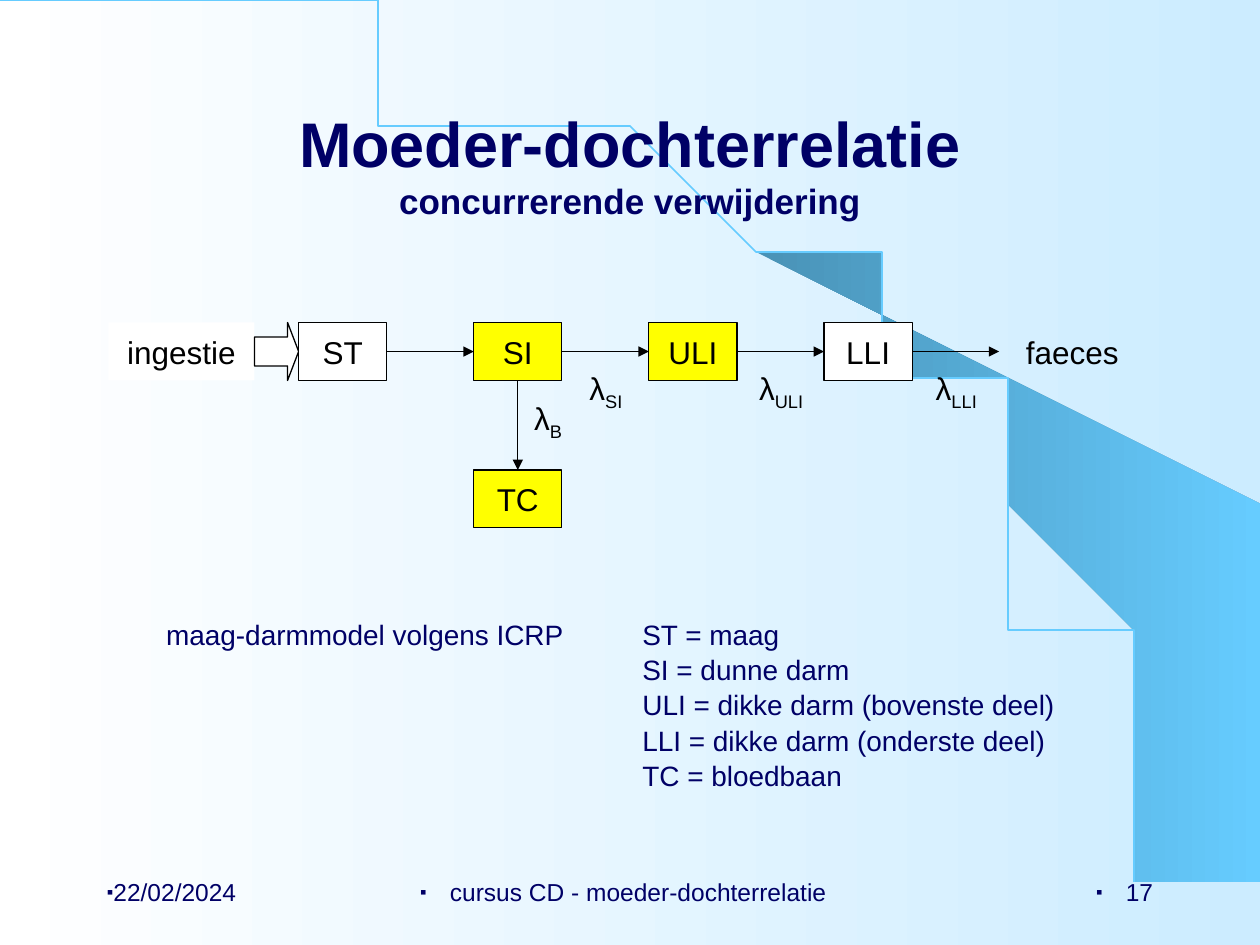
from lxml import etree
from pptx import Presentation
from pptx.dml.color import RGBColor
from pptx.enum.shapes import MSO_CONNECTOR, MSO_SHAPE
from pptx.enum.text import MSO_ANCHOR, PP_ALIGN
from pptx.oxml.ns import qn
from pptx.util import Inches, Pt

RECT, BLOCK_ARROW = MSO_SHAPE.RECTANGLE, MSO_SHAPE.RIGHT_ARROW
STRAIGHT = MSO_CONNECTOR.STRAIGHT
TOP, MIDDLE = MSO_ANCHOR.TOP, MSO_ANCHOR.MIDDLE
LEFT, CENTER, RIGHT = PP_ALIGN.LEFT, PP_ALIGN.CENTER, PP_ALIGN.RIGHT
SIDE_TOP, SIDE_LEFT, SIDE_BOTTOM, SIDE_RIGHT = range(4)

COLORS = {
    "navy": "000066", "black": "000000", "white": "FFFFFF", "yellow": "FFFF00",
    "pale": "CCECFF", "sky": "66CCFF", "steel": "4992B6",
}
FONT = "Arial"
WIDE_INSETS = (0.1, 0.05, 0.1, 0.05)
BOX_INSETS = (0.02, 0.08, 0.02, 0.02)
LABEL_INSETS = (0.02, 0.02, 0.02, 0.02)

CHAIN_LEFT, CHAIN_TOP, PITCH = 2.37, 2.56, 1.39
BOX_W, BOX_H = 0.7, 0.46
CHAIN = [("ST", "white"), ("SI", "yellow"), ("ULI", "yellow"), ("LLI", "white")]

WEDGE = [
    (9.2, 7.48), (9.99, 7.49), (9.99, 4.23), (5.89, 1.73), (6.24, 1.99),
    (6.53, 2.22), (6.85, 2.5), (7.16, 2.8), (7.62, 3.3), (8.03, 3.84),
    (8.32, 4.31), (8.58, 4.79), (8.78, 5.28), (8.93, 5.72), (9.03, 6.09),
    (9.13, 6.56), (9.17, 6.96),
]
ARC = [(0, 0), (5.08, 0), (9.2, 3.35), (9.2, 7.49)]
ARC_STEPS = 60

LEGEND = [
    "maag-darmmodel volgens ICRP\tST = maag",
    "\tSI = dunne darm",
    "\tULI = dikke darm (bovenste deel)",
    "\tLLI = dikke darm (onderste deel)",
    "\tTC = bloedbaan",
]
FOOTERS = [
    ("22/02/2024", 0.75, 2.08, LEFT),
    ("cursus CD - moeder-dochterrelatie", 3.19, 3.7, CENTER),
    ("17", 7.17, 2.08, RIGHT),
]


def rgb(name):
    return RGBColor.from_string(COLORS[name])


def fill_gradient(fill, start, end):
    """Fill from left to right."""
    fill.gradient()
    fill.gradient_angle = 0
    for stop, color in zip(fill.gradient_stops, (start, end)):
        stop.color.rgb = rgb(color)


def set_frame(shape, insets, anchor=TOP):
    frame = shape.text_frame
    settings = dict(zip(
        ("margin_left", "margin_top", "margin_right", "margin_bottom"),
        map(Inches, insets)))
    settings.update(word_wrap=True, vertical_anchor=anchor)
    for name, value in settings.items():
        setattr(frame, name, value)
    return frame


def add_run(paragraph, text, size, color="black", bold=False):
    run = paragraph.add_run()
    run.text = text
    run.font.color.rgb = rgb(color)
    formats = {"name": FONT, "size": Pt(size), "bold": bold}
    for name, value in formats.items():
        setattr(run.font, name, value)
    return run


def add_text(slide, bounds, insets=WIDE_INSETS, anchor=TOP, align=LEFT):
    """Add an empty text box; return it with its first paragraph."""
    box = slide.shapes.add_textbox(*map(Inches, bounds))
    paragraph = set_frame(box, insets, anchor).paragraphs[0]
    paragraph.alignment = align
    return box, paragraph


def add_shape(slide, kind, bounds, fill, line="black"):
    shape = slide.shapes.add_shape(kind, *map(Inches, bounds))
    shape.shadow.inherit = False
    shape.fill.solid()
    shape.fill.fore_color.rgb = rgb(fill)
    if line:
        shape.line.color.rgb = rgb(line)
        shape.line.width = Pt(0.75)
    else:
        shape.line.fill.background()
    return shape


def add_compartment(slide, text, left, top, fill, width=BOX_W, line="black"):
    shape = add_shape(slide, RECT, (left, top, width, BOX_H), fill, line)
    paragraph = set_frame(shape, BOX_INSETS).paragraphs[0]
    paragraph.alignment = CENTER
    add_run(paragraph, text, 18)
    return shape


def add_arrow(slide, source, source_side, target, target_side):
    arrow = slide.shapes.add_connector(STRAIGHT, 0, 0, 0, 0)
    arrow.begin_connect(source, source_side)
    arrow.end_connect(target, target_side)
    arrow.line.color.rgb = rgb("black")
    arrow.line.width = Pt(0.75)
    etree.SubElement(arrow.line._get_or_add_ln(), qn("a:tailEnd"), type="triangle")
    etree.SubElement(arrow._element.spPr, qn("a:effectLst"))


def add_rate(slide, subscript, left, top):
    """Label an arrow with its rate constant."""
    _, paragraph = add_text(slide, (left, top, BOX_W, BOX_H), LABEL_INSETS, align=CENTER)
    add_run(paragraph, "λ", 18)
    lowered = add_run(paragraph, subscript, 18)
    lowered.font._element.set("baseline", "-25000")


def add_outline(slide, points, closed):
    builder = slide.shapes.build_freeform(*points[0], scale=Inches(1))
    builder.add_line_segments(points[1:], close=closed)
    shape = builder.convert_to_shape()
    shape.shadow.inherit = False
    return shape


def arc_point(t):
    weights = ((1 - t) ** 3, 3 * t * (1 - t) ** 2, 3 * t * t * (1 - t), t ** 3)
    return tuple(sum(w * p[axis] for w, p in zip(weights, ARC)) for axis in (0, 1))


def add_backdrop(slide):
    fill_gradient(slide.background.fill, "white", "pale")
    wedge = add_outline(slide, WEDGE, True)
    fill_gradient(wedge.fill, "steel", "sky")
    wedge.line.fill.background()
    arc = add_outline(slide, [arc_point(i / ARC_STEPS) for i in range(ARC_STEPS + 1)], False)
    arc.fill.background()
    arc.line.color.rgb = rgb("sky")
    arc.line.width = Pt(1)


def add_title(slide):
    _, paragraph = add_text(slide, (0.75, 0.67, 8.5, 1.25), anchor=MIDDLE, align=CENTER)
    add_run(paragraph, "Moeder-dochterrelatie", 36, "navy", True)
    paragraph.add_line_break()
    add_run(paragraph, "concurrerende verwijdering", 20, "navy", True)


def add_legend(slide):
    box, paragraph = add_text(slide, (1.22, 4.85, 7.48, 1.46))
    for i, line in enumerate(LEGEND):
        if i:
            paragraph = box.text_frame.add_paragraph()
        paragraph.space_before = Pt(1)
        tabs = etree.SubElement(paragraph._p.get_or_add_pPr(), qn("a:tabLst"))
        etree.SubElement(tabs, qn("a:tab"), pos=str(Inches(3.78)), algn="l")
        add_run(paragraph, line, 16, "navy")


def add_footer(slide, text, left, width, align):
    _, paragraph = add_text(slide, (left, 6.83, width, 0.5), anchor=MIDDLE, align=align)
    properties = paragraph._p.get_or_add_pPr()
    etree.SubElement(properties, qn("a:buSzPct"), val="75000")
    etree.SubElement(properties, qn("a:buFont"), typeface=FONT)
    etree.SubElement(properties, qn("a:buChar"), char="▪")
    add_run(paragraph, text, 14, "navy")


def add_model(slide):
    lefts = [CHAIN_LEFT + i * PITCH for i in range(len(CHAIN) + 1)]
    add_compartment(slide, "ingestie", 0.86, CHAIN_TOP, "white", 1.16, None)
    intake = add_shape(slide, BLOCK_ARROW, (2.02, CHAIN_TOP, 0.35, BOX_H), "white")
    intake.adjustments[0], intake.adjustments[1] = 0.5, 0.25

    stages = [add_compartment(slide, name, left, CHAIN_TOP, fill)
              for (name, fill), left in zip(CHAIN, lefts)]
    blood = add_compartment(slide, "TC", lefts[1], 3.73, "yellow")
    faeces, paragraph = add_text(
        slide, (lefts[-1], CHAIN_TOP, 1.16, BOX_H), BOX_INSETS, align=CENTER)
    add_run(paragraph, "faeces", 18)

    for source, target in zip(stages, stages[1:] + [faeces]):
        add_arrow(slide, source, SIDE_RIGHT, target, SIDE_LEFT)
    add_arrow(slide, stages[1], SIDE_BOTTOM, blood, SIDE_TOP)
    for (name, _), left in list(zip(CHAIN, lefts))[1:]:
        add_rate(slide, name, left + BOX_W, 2.91)
    add_rate(slide, "B", 4, 3.15)


def main():
    deck = Presentation()
    deck.slide_width, deck.slide_height = Inches(10), Inches(7.5)
    slide = deck.slides.add_slide(deck.slide_layouts[6])
    add_backdrop(slide)
    add_title(slide)
    add_legend(slide)
    for footer in FOOTERS:
        add_footer(slide, *footer)
    add_model(slide)
    deck.save("out.pptx")


if __name__ == "__main__":
    main()
